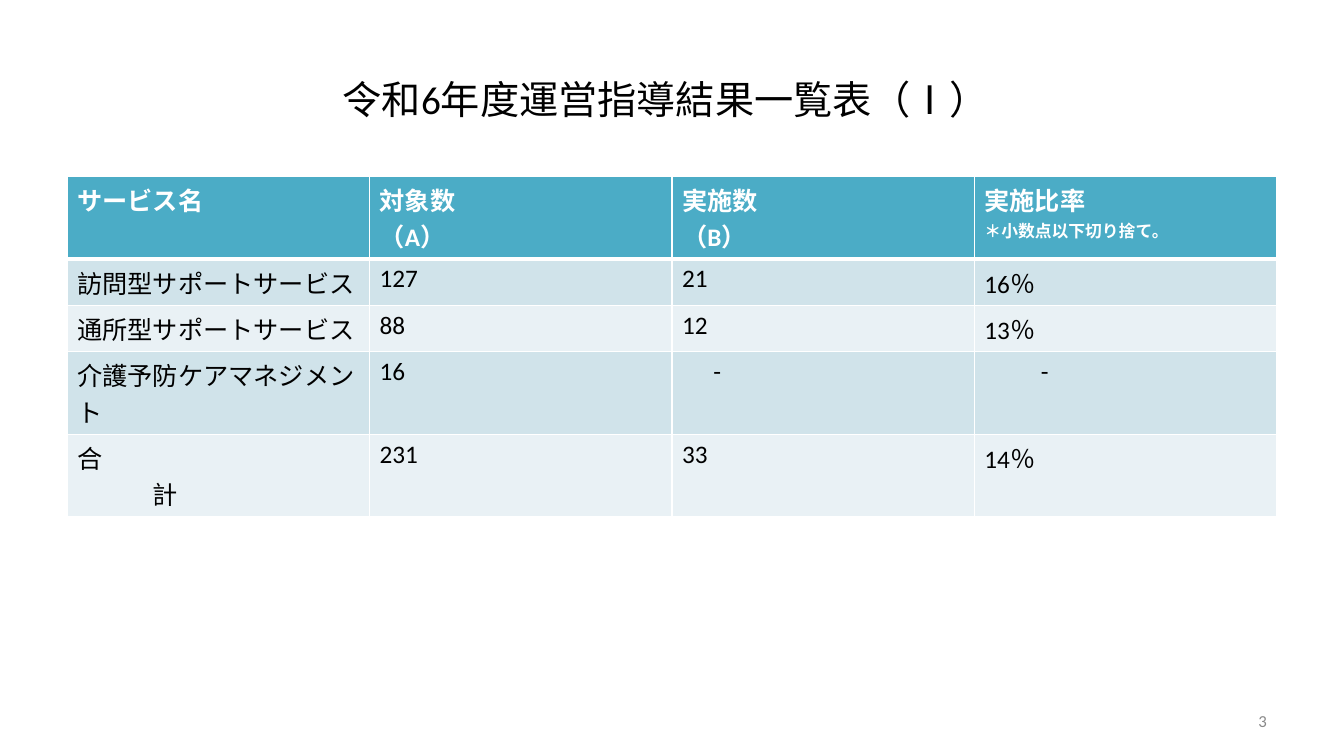
"""Build the slide of guidance results by service."""
from dataclasses import dataclass

from lxml.etree import SubElement
from pptx import Presentation
from pptx.dml.color import RGBColor
from pptx.enum.text import MSO_ANCHOR, PP_ALIGN
from pptx.oxml.ns import qn
from pptx.util import Inches, Pt

SLIDE_WIDTH, SLIDE_HEIGHT = Inches(13.33), Inches(7.5)
LINE_COLOUR = "FFFFFF"
HEADER_FILL = "4BACC6"
BAND_FILLS = ("D0E3EA", "E9F1F5")
HEADER = {"size": Pt(18), "name": "Calibri", "bold": True}
BODY = HEADER | {"bold": False}
ROW_HEIGHTS = (0.82, 0.46, 0.46, 0.82, 0.82)


@dataclass(frozen=True)
class Area:
    """A rectangle given in shares of the slide's size."""
    left: float
    top: float
    width: float
    height: float

    def box(self) -> tuple[int, int, int, int]:
        """Return the rectangle as lengths."""
        return (int(self.left * SLIDE_WIDTH), int(self.top * SLIDE_HEIGHT),
                int(self.width * SLIDE_WIDTH), int(self.height * SLIDE_HEIGHT))


@dataclass(frozen=True)
class Line:
    """A line of text with its indent in inches and an optional own size."""
    text: str
    indent: float = 0
    size: int | None = None


TITLE_AREA = Area(0.158, 0.053, 0.675, 0.155)
TABLE_AREA = Area(0.05, 0.233, 0.9, 0.45)
NUMBER_AREA = Area(0.717, 0.927, 0.233, 0.053)

ROWS = (
    ((Line("サービス名"),), (Line("対象数"), Line("（A）")),
     (Line("実施数"), Line("（B）")),
     (Line("実施比率"), Line("＊小数点以下切り捨て。", size=12))),
    ((Line("訪問型サポートサービス"),), (Line("127"),), (Line("21"),), (Line("16％"),)),
    ((Line("通所型サポートサービス"),), (Line("88"),), (Line("12"),), (Line("13％"),)),
    ((Line("介護予防ケアマネジメント"),), (Line("16"),),
     (Line("-", 0.31),), (Line("-", 0.56),)),
    ((Line("合"), Line("計", 0.75)), (Line("231"),), (Line("33"),), (Line("14％"),)),
)


def colour(value: str) -> RGBColor:
    """Turn a hex string into a colour."""
    return RGBColor.from_string(value)


def apply_format(target, values: dict) -> None:
    """Set every attribute named in the dict."""
    for name, value in values.items():
        setattr(target, name, value)


def write_lines(frame, lines: tuple[Line, ...], font: dict, text_colour: str,
                alignment: PP_ALIGN = PP_ALIGN.LEFT) -> None:
    """Write one paragraph per line into a text frame."""
    for index, line in enumerate(lines):
        paragraph = frame.add_paragraph() if index else frame.paragraphs[0]
        paragraph.alignment = alignment
        if line.indent:
            paragraph._p.get_or_add_pPr().set("marL", str(Inches(line.indent)))
        run = paragraph.add_run()
        run.text = line.text
        size = Pt(line.size) if line.size else font["size"]
        apply_format(run.font, font | {"size": size})
        run.font.color.rgb = colour(text_colour)


def draw_borders(cell, bottom_width: int) -> None:
    """Give a cell its four white borders."""
    properties = cell._tc.get_or_add_tcPr()
    for side in "LRTB":
        width = bottom_width if side == "B" else 1
        border = SubElement(properties, qn(f"a:ln{side}"), w=str(Pt(width)))
        fill = SubElement(border, qn("a:solidFill"))
        SubElement(fill, qn("a:srgbClr"), val=LINE_COLOUR)


def draw_table(slide) -> None:
    """Draw the table of results."""
    table = slide.shapes.add_table(len(ROWS), len(ROWS[0]), *TABLE_AREA.box()).table
    table.horz_banding = False
    for row_index, row in enumerate(ROWS):
        is_header = row_index == 0
        table.rows[row_index].height = Inches(ROW_HEIGHTS[row_index])
        fill = HEADER_FILL if is_header else BAND_FILLS[(row_index - 1) % 2]
        for column_index, lines in enumerate(row):
            cell = table.cell(row_index, column_index)
            write_lines(cell.text_frame, lines, HEADER if is_header else BODY,
                        "FFFFFF" if is_header else "000000")
            draw_borders(cell, 3 if is_header else 1)
            cell.fill.solid()
            cell.fill.fore_color.rgb = colour(fill)


def draw_text(shape, area: Area, text: str, size: int, text_colour: str,
              alignment: PP_ALIGN) -> None:
    """Place a shape and write one line of text, centred in height."""
    positions = ("left", "top", "width", "height")
    apply_format(shape, dict(zip(positions, area.box())))
    apply_format(shape.text_frame,
                 {"word_wrap": True, "vertical_anchor": MSO_ANCHOR.MIDDLE})
    write_lines(shape.text_frame, (Line(text),), BODY | {"size": Pt(size)},
                text_colour, alignment)


def main() -> None:
    """Build and save the presentation."""
    presentation = Presentation()
    apply_format(presentation,
                 {"slide_width": SLIDE_WIDTH, "slide_height": SLIDE_HEIGHT})
    slide = presentation.slides.add_slide(presentation.slide_layouts[5])
    draw_text(slide.shapes.title, TITLE_AREA, "令和6年度運営指導結果一覧表（Ⅰ）",
              28, "000000", PP_ALIGN.CENTER)
    number = slide.shapes.add_textbox(*NUMBER_AREA.box())
    draw_text(number, NUMBER_AREA, "3", 12, "898989", PP_ALIGN.RIGHT)
    draw_table(slide)
    presentation.save("out.pptx")


if __name__ == "__main__":
    main()
